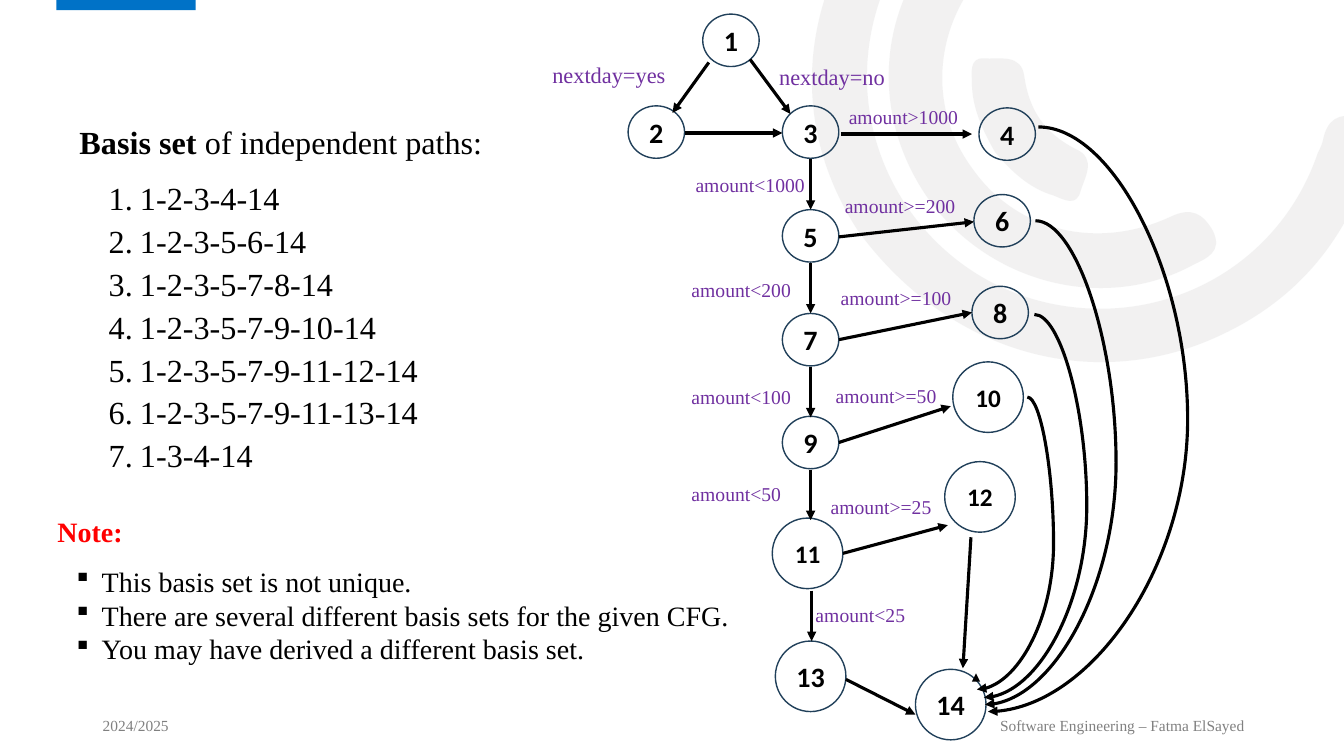
from lxml import etree
from pptx import Presentation
from pptx.dml.color import RGBColor
from pptx.enum.shapes import MSO_CONNECTOR, MSO_SHAPE
from pptx.enum.text import MSO_ANCHOR, PP_ALIGN
from pptx.oxml.ns import qn
from pptx.util import Pt

PX = 9144
STRAIGHT, CURVE = MSO_CONNECTOR.STRAIGHT, MSO_CONNECTOR.CURVE
OVAL, RECT = MSO_SHAPE.OVAL, MSO_SHAPE.RECTANGLE
MIDDLE, CENTER = MSO_ANCHOR.MIDDLE, PP_ALIGN.CENTER

BLACK = RGBColor(0x00, 0x00, 0x00)
BLUE = RGBColor(0x00, 0x72, 0xC7)
NAVY = RGBColor(0x21, 0x40, 0x5A)
PURPLE = RGBColor(0x70, 0x30, 0xA0)
RED = RGBColor(0xFF, 0x00, 0x00)
GRAY = RGBColor(0x80, 0x80, 0x80)
PALE = RGBColor(0xE7, 0xE6, 0xE6)
SERIF, SANS = "Times New Roman", "Calibri"

RINGS = [
    [(51, 229), (-1, 149), (-13, 50), (38, -50), (90, -152), (176, -203), (290, -207),
     (305, -207), (321, -210), (331, -195), (344, -175), (327, -154), (298, -154),
     (167, -154), (65, -59), (60, 68), (56, 181), (136, 281), (246, 302),
     (360, 324), (470, 261), (507, 152), (509, 148), (511, 144), (512, 140),
     (516, 119), (527, 111), (549, 117), (573, 124), (567, 141), (561, 156),
     (534, 245), (478, 307), (391, 341), (270, 387), (136, 345), (51, 229)],
    [(122, 199), (62, 115), (69, 7), (140, -68), (151, -79), (162, -95), (180, -78),
     (195, -64), (197, -50), (179, -32), (125, 26), (120, 108), (165, 168),
     (208, 229), (288, 249), (361, 215), (382, 205), (393, 212), (403, 229),
     (413, 250), (397, 256), (383, 263), (296, 310), (183, 282), (122, 199)],
    [(187, 151), (175, 130), (164, 107), (164, 82), (164, 73), (161, 57), (176, 58),
     (192, 59), (213, 53), (216, 76), (221, 110), (236, 132), (267, 148),
     (288, 157), (276, 176), (272, 189), (268, 206), (255, 198), (245, 194),
     (221, 187), (203, 170), (187, 151)],
]

SMALL_NODES = {1: (197, 14), 2: (123, 105), 3: (276, 105), 5: (276, 208), 7: (276, 311),
               9: (276, 413), 4: (471, 107), 6: (466, 193), 8: (464, 284)}
LARGE_NODES = {11: (266, 514), 13: (269, 636), 14: (408, 664), 10: (445, 359), 12: (437, 458)}
TIGHT_NODES = (10, 11, 12)
DOWN_FROM = (3, 5, 7, 9)
EDGES = [(203, 62, 167, 112), (244, 59, 284, 113), (179, 132, 276, 132),
         (305, 586, 305, 636), (339, 674, 408, 709), (334, 133, 464, 133),
         (332, 235, 466, 220), (332, 337, 464, 310), (332, 439, 443, 403),
         (336, 549, 440, 521), (463, 533, 455, 663)]
RETURNS = [(530, 126, 480, 706, 678), (527, 219, 477, 699, 607),
           (526, 312, 476, 692, 578), (519, 394, 469, 684, 545)]
LABELS = [
    ("nextday=yes", 38, 56, 134, 16), ("nextday=no", 263, 58, 126, 16),
    ("amount>1000", 332, 99, 129, 14), ("amount<1000", 180, 167, 129, 14),
    ("amount>=200", 328, 187, 131, 14), ("amount>=100", 324, 279, 131, 14),
    ("amount>=50", 319, 376, 121, 14), ("amount>=25", 314, 486, 121, 14),
    ("amount<200", 176, 271, 120, 14), ("amount<100", 176, 377, 120, 14),
    ("amount<50", 176, 473, 110, 14), ("amount<25", 299, 593, 110, 14),
]
PATHS = ["1-2-3-4-14", "1-2-3-5-6-14", "1-2-3-5-7-8-14", "1-2-3-5-7-9-10-14",
         "1-2-3-5-7-9-11-12-14", "1-2-3-5-7-9-11-13-14", "1-3-4-14"]
NOTES = ["This basis set is not unique.",
         "There are several different basis sets for the given CFG.",
         "You may have derived a different basis set."]


def emu(*lengths):
    return [n * PX for n in lengths]


def set_font(item, size, color, name=SERIF, bold=False):
    font = item.font
    font.size, font.name, font.bold = Pt(size), name, bold
    font.color.rgb = color


def add_text(slide, box, wrap=False):
    tf = slide.shapes.add_textbox(*emu(*box)).text_frame
    tf.word_wrap = wrap
    return tf


def add_label(slide, text, box, size, color):
    p = add_text(slide, box).paragraphs[0]
    p.text = text
    set_font(p, size, color)


def add_item(tf, text, size, left, hang, bullet):
    p = tf.add_paragraph()
    p.text = text
    set_font(p, size, BLACK)
    pPr = p._p.get_or_add_pPr()
    pPr.set("marL", str(left * PX))
    pPr.set("indent", str(-hang * PX))
    for tag, attrs in bullet.items():
        etree.SubElement(pPr, qn(tag), **attrs)
    return p


def add_arrow(shapes, x, y, edge, kind=STRAIGHT, width=2.25):
    x1, y1, x2, y2 = edge
    sp = shapes.add_connector(kind, *emu(x + x1, y + y1, x + x2, y + y2))
    sp.line.color.rgb = BLACK
    sp.line.width = Pt(width)
    etree.SubElement(sp.line._get_or_add_ln(), qn("a:tailEnd"), type="triangle")
    etree.SubElement(sp._element.spPr, qn("a:effectLst"))
    return sp


def add_return(shapes, x, y, x1, y1, x2, y2, bulge):
    sp = add_arrow(shapes, x, y, (x1, y1, x2, y2), CURVE)
    geom = sp._element.spPr.find(qn("a:prstGeom"))
    guides = geom.find(qn("a:avLst"))
    if guides is None:
        guides = etree.SubElement(geom, qn("a:avLst"))
    share = round((bulge - x1) / (x2 - x1) * 100000)
    etree.SubElement(guides, qn("a:gd"), name="adj1", fmla=f"val {share}")


def add_node(shapes, number, x, y, w, h):
    sp = shapes.add_shape(OVAL, *emu(x, y, w, h))
    sp.shadow.inherit = False
    sp.fill.background()
    sp.line.color.rgb = NAVY
    sp.line.width = Pt(1)
    tf = sp.text_frame
    tf.margin_left = tf.margin_right = tf.margin_top = tf.margin_bottom = 0
    tf.vertical_anchor = MIDDLE
    p = tf.paragraphs[0]
    p.text = str(number)
    p.alignment = CENTER
    set_font(p, 18 if number in TIGHT_NODES else 20, BLACK, SANS, True)


def bend_segments(sp):
    lines = list(sp._element.spPr.iter(qn("a:lnTo")))
    for i in range(0, len(lines), 3):
        curve = etree.Element(qn("a:cubicBezTo"))
        lines[i].addprevious(curve)
        for line in lines[i:i + 3]:
            curve.append(line[0])
            line.getparent().remove(line)


def add_rings(slide, x, y):
    shapes = slide.shapes.add_group_shape().shapes
    for ring in RINGS:
        points = [emu(x + px, y + py) for px, py in ring]
        builder = shapes.build_freeform(*points[0], scale=1.0)
        builder.add_line_segments(points[1:], close=True)
        sp = builder.convert_to_shape()
        bend_segments(sp)
        sp.shadow.inherit = False
        sp.fill.solid()
        sp.fill.fore_color.rgb = PALE
        sp.line.fill.background()
        color = sp._element.spPr.find(qn("a:solidFill")).find(qn("a:srgbClr"))
        etree.SubElement(color, qn("a:alpha"), val="53000")


def add_tab(slide, box):
    sp = slide.shapes.add_shape(RECT, *emu(*box))
    sp.shadow.inherit = False
    sp.fill.solid()
    sp.fill.fore_color.rgb = BLUE
    sp.line.fill.background()


def add_footer(slide, x, y):
    add_label(slide, "2024/2025", (x, y, 86, 29), 11, GRAY)
    add_label(slide, "Software Engineering – Fatma ElSayed", (x + 890, y, 264, 29), 11, GRAY)


def add_graph(slide, x, y):
    shapes = slide.shapes.add_group_shape().shapes
    for nodes, w, h in ((SMALL_NODES, 56, 52), (LARGE_NODES, 70, 70)):
        for number, (nx, ny) in nodes.items():
            add_node(shapes, number, x + nx, y + ny, w, h)
    for number in DOWN_FROM:
        nx, ny = SMALL_NODES[number]
        add_arrow(shapes, x, y, (nx + 28, ny + 53, nx + 28, ny + 103))
    for edge in EDGES:
        add_arrow(shapes, x, y, edge)
    for path in RETURNS:
        add_return(shapes, x, y, *path)
    add_arrow(shapes, x, y, (468, 671, 468, 668), width=1.5)


def add_edge_labels(slide, x, y):
    for text, lx, ly, w, size in LABELS:
        add_label(slide, text, (x + lx, y + ly, w, 37 if size == 16 else 34), size, PURPLE)


def add_paths(slide, box):
    tf = add_text(slide, box)
    p = tf.paragraphs[0]
    p._p.get_or_add_pPr().set("marL", str(8 * PX))
    p.space_after = Pt(13)
    for text, bold in (("Basis set ", True), ("of independent paths:", False)):
        r = p.add_run()
        r.text = text
        set_font(r, 23, BLACK, bold=bold)
    for path in PATHS:
        p = add_item(tf, path, 23, 68, 31, {"a:buAutoNum": {"type": "arabicPeriod"}})
        p.space_after = Pt(3)


def add_notes(slide, box):
    tf = add_text(slide, box, wrap=True)
    p = tf.paragraphs[0]
    p.text = "Note:"
    p.space_after = Pt(12)
    set_font(p, 20, RED, bold=True)
    for note in NOTES:
        add_item(tf, note, 20, 44, 25,
                 {"a:buFont": {"typeface": "Wingdings"}, "a:buChar": {"char": "§"}})


def main():
    prs = Presentation()
    prs.slide_width, prs.slide_height = emu(1333, 750)
    slide = prs.slides.add_slide(prs.slide_layouts[6])
    add_footer(slide, 92, 706)
    add_rings(slide, 800, 0)
    add_tab(slide, (56, -2, 138, 12))
    add_graph(slide, 500, 0)
    add_paths(slide, (61, 116, 449, 375))
    add_notes(slide, (47, 505, 689, 162))
    add_edge_labels(slide, 500, 0)
    prs.save("out.pptx")


if __name__ == "__main__":
    main()
